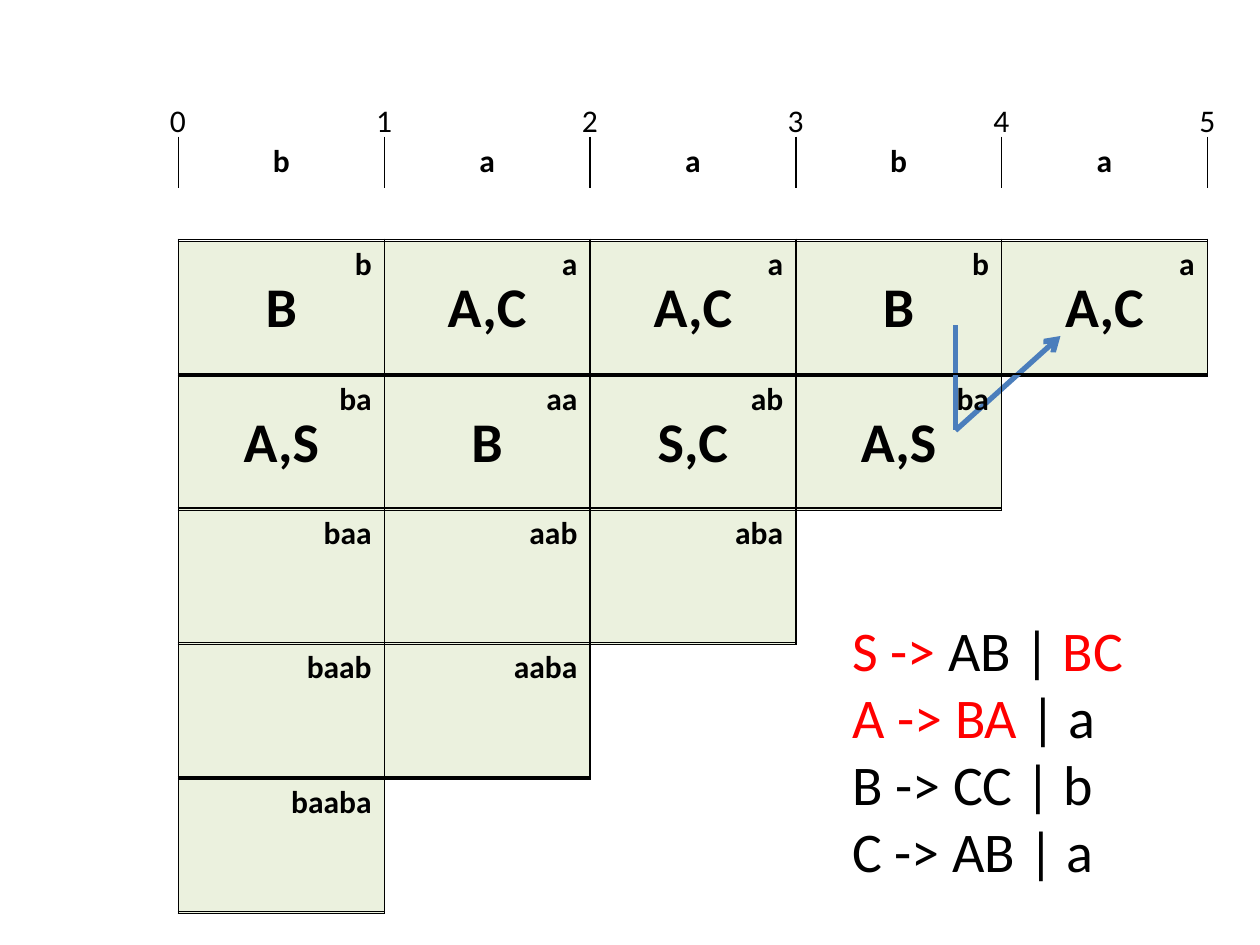
from lxml.etree import SubElement
from pptx import Presentation
from pptx.dml.color import RGBColor
from pptx.enum.shapes import MSO_CONNECTOR
from pptx.enum.text import MSO_ANCHOR, PP_ALIGN
from pptx.oxml import parse_xml
from pptx.oxml.ns import nsdecls, qn
from pptx.util import Pt

PX = 7620  # 120 px to the inch
BLACK = RGBColor(0, 0, 0)
WHITE = RGBColor(255, 255, 255)
RED = RGBColor(255, 0, 0)
GREEN = RGBColor(0xEB, 0xF1, 0xDE)
BLUE = RGBColor(0x4B, 0x7E, 0xBC)
FONT = "Calibri"

WORD = "baaba"
SIZE = len(WORD)
COL, ROW = 196, 128
SETS = [["B", "A,C", "A,C", "B", "A,C"], ["A,S", "B", "S,C", "A,S"]]
RULES = [
    [("S ->", RED), (" AB | ", BLACK), ("BC", RED)],
    [("A -> BA ", RED), ("| a", BLACK)],
    [("B -> CC | b", BLACK)],
    [("C -> AB | a", BLACK)],
]


def emu(*nums):
    return [n * PX for n in nums]


def style(para, size, bold=False, color=BLACK):
    font = para.font
    font.name, font.size, font.bold = FONT, Pt(size), bold
    font.color.rgb = color


def set_edges(cell, sides):
    """Draw the named sides in black and leave the others open."""
    props = cell._tc.get_or_add_tcPr()
    for pos, side in enumerate("LRTB"):
        paint = ('<a:solidFill><a:srgbClr val="000000"/></a:solidFill>'
                 if side in sides else "<a:noFill/>")
        props.insert(pos, parse_xml(
            f'<a:ln{side} {nsdecls("a")} w="12700">{paint}</a:ln{side}>'))


def add_grid(slide, box, rows):
    table = slide.shapes.add_table(rows, SIZE, *emu(*box)).table
    table.first_row = table.horz_banding = False
    return table


def fill_cell(cell, text, size, align, anchor=MSO_ANCHOR.TOP):
    cell.text = text
    cell.vertical_anchor = anchor
    para = cell.text_frame.paragraphs[0]
    para.alignment = align
    style(para, size, True)


def add_chart(slide, box, texts, size, align, anchor, color=None):
    """Triangular chart: row i has SIZE - i cells in use."""
    table = add_grid(slide, box, SIZE)
    for i in range(SIZE):
        for j in range(SIZE):
            cell = table.cell(i, j)
            used = i + j < SIZE
            if used and color is not None:
                cell.fill.solid()
                cell.fill.fore_color.rgb = color
            else:
                cell.fill.background()
            set_edges(cell, "LRTB" if used else "LT" if i + j == SIZE else "")
            if i < len(texts) and j < len(texts[i]):
                fill_cell(cell, texts[i][j], size, align, anchor)


def add_word(slide, box):
    table = add_grid(slide, box, 1)
    for j, char in enumerate(WORD):
        cell = table.cell(0, j)
        cell.fill.solid()
        cell.fill.fore_color.rgb = WHITE
        set_edges(cell, "LR")
        fill_cell(cell, char, 18, PP_ALIGN.CENTER)


def add_text(slide, box):
    frame = slide.shapes.add_textbox(*emu(*box)).text_frame
    frame.word_wrap = True
    return frame


def add_marks(slide, box):
    """Position numbers, centred by tab stops over the column edges."""
    para = add_text(slide, box).paragraphs[0]
    para.text = "\t".join(str(n) for n in range(SIZE + 1))
    style(para, 18)
    stops = SubElement(para._p.get_or_add_pPr(), qn("a:tabLst"))
    for n in range(1, SIZE + 1):
        SubElement(stops, qn("a:tab"), pos=str((8 + n * COL) * PX), algn="ctr")
    props = para._p.pPr
    props.insert(0, stops)


def add_rules(slide, box):
    frame = add_text(slide, box)
    for i, parts in enumerate(RULES):
        para = frame.add_paragraph() if i else frame.paragraphs[0]
        style(para, 32)
        for text, color in parts:
            run = para.add_run()
            run.text = text
            run.font.color.rgb = color


def add_path(slide, box):
    """Line down the left side, then an arrow up to the right."""
    x, y, w, h = box
    points = [(x, y), (x, y + h), (x + w, y + 10)]
    for start, end in zip(points, points[1:]):
        line = slide.shapes.add_connector(
            MSO_CONNECTOR.STRAIGHT, *emu(*start, *end))
        line.line.color.rgb = BLUE
        line.line.width = Pt(3)
        SubElement(line._element.spPr, qn("a:effectLst"))
    SubElement(line.line._get_or_add_ln(), qn("a:tailEnd"), type="arrow")


def main():
    prs = Presentation()
    prs.slide_width, prs.slide_height = emu(1200, 900)
    slide = prs.slides.add_slide(prs.slide_layouts[6])
    wide, high = SIZE * COL, SIZE * ROW

    # Symbol sets and the pair being combined
    add_chart(slide, (170, 230, wide, high), SETS, 32,
              PP_ALIGN.CENTER, MSO_ANCHOR.MIDDLE, GREEN)
    add_path(slide, (910, 310, 100, 100))

    # Grammar
    add_rules(slide, (800, 580, 350, 271))

    # Input word with its positions
    add_word(slide, (170, 130, wide, 49))
    add_marks(slide, (150, 90, 1020, 48))

    # Substring labels: row i holds those of length i + 1
    parts = [[WORD[j:j + i + 1] for j in range(SIZE - i)] for i in range(SIZE)]
    add_chart(slide, (170, 228, wide, high), parts, 18,
              PP_ALIGN.RIGHT, MSO_ANCHOR.TOP)

    prs.save("out.pptx")


if __name__ == "__main__":
    main()
